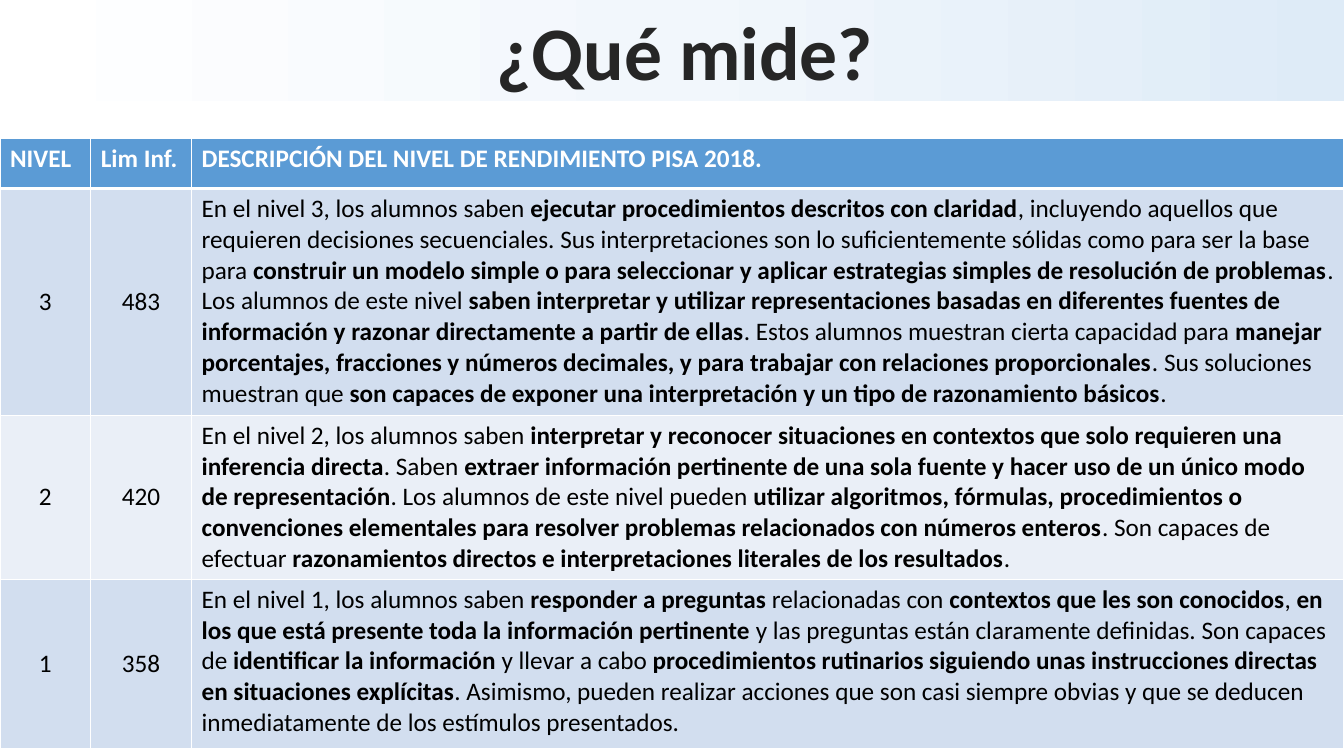
from copy import deepcopy

from lxml.etree import SubElement
from pptx import Presentation
from pptx.dml.color import RGBColor
from pptx.enum.shapes import MSO_SHAPE as Shape
from pptx.enum.text import MSO_ANCHOR as Anchor, MSO_AUTO_SIZE as AutoSize, PP_ALIGN as Align
from pptx.oxml.ns import qn
from pptx.util import Inches, Pt

COLORS = {
    "white": "FFFFFF",
    "pale": "F2F7FC",
    "sky": "DEEBF7",
    "header": "5B9BD5",
    "odd": "D2DEEF",
    "even": "EAEFF7",
    "text": "000000",
    "title": "262626",
}
COLUMN_WIDTHS = [0.9, 1, 11.43]
ROW_HEIGHTS = [0.5, 2.25, 1.59, 1.68]

# Asterisks enclose bold text.
ROWS = [
    ("*NIVEL*", "*Lim Inf.*", "*DESCRIPCIÓN DEL NIVEL DE RENDIMIENTO PISA 2018.*"),
    ("3", "483",
     "En el nivel 3, los alumnos saben *ejecutar procedimientos descritos con claridad*, "
     "incluyendo aquellos que requieren decisiones secuenciales. Sus interpretaciones son lo "
     "suficientemente sólidas como para ser la base para *construir un modelo simple o para "
     "seleccionar y aplicar estrategias simples de resolución de problemas*. Los alumnos de este "
     "nivel *saben interpretar y utilizar representaciones basadas en diferentes fuentes de "
     "información y razonar directamente a partir de ellas*. Estos alumnos muestran cierta "
     "capacidad para *manejar porcentajes, fracciones y números decimales, y para trabajar con "
     "relaciones proporcionales*. Sus soluciones muestran que *son capaces de exponer una "
     "interpretación y un tipo de razonamiento básicos*."),
    ("2", "420",
     "En el nivel 2, los alumnos saben *interpretar y reconocer situaciones en contextos que solo "
     "requieren una inferencia directa*. Saben *extraer información pertinente de una sola fuente "
     "y hacer uso de un único modo de representación*. Los alumnos de este nivel pueden *utilizar "
     "algoritmos, fórmulas, procedimientos o convenciones elementales para resolver problemas "
     "relacionados con números enteros*. Son capaces de efectuar *razonamientos directos e "
     "interpretaciones literales de los resultados*."),
    ("1", "358",
     "En el nivel 1, los alumnos saben *responder a preguntas *relacionadas con *contextos que les "
     "son conocidos*, *en los que está presente toda la información pertinente *y las preguntas "
     "están claramente definidas. Son capaces de *identificar la información *y llevar a cabo "
     "*procedimientos rutinarios siguiendo unas instrucciones directas en situaciones explícitas*. "
     "Asimismo, pueden realizar acciones que son casi siempre obvias y que se deducen "
     "inmediatamente de los estímulos presentados."),
]


def write_text(frame, text, size=18, color="text", align=Align.LEFT):
    """Fill the first paragraph, with bold runs between asterisks."""
    paragraph = frame.paragraphs[0]
    paragraph.alignment = align
    for index, part in enumerate(text.split("*")):
        if part:
            run = paragraph.add_run()
            run.text = part
            run.font.name = "Calibri"
            run.font.size = Pt(size)
            run.font.bold = index % 2 == 1
            run.font.color.rgb = RGBColor.from_string(COLORS[color])
    return paragraph


def add_line(parent, tag, width):
    """Append a white line element; width is in points."""
    line = SubElement(parent, qn(tag), w=str(Pt(width)))
    fill = SubElement(line, qn("a:solidFill"))
    SubElement(fill, qn("a:srgbClr"), val=COLORS["white"])
    return line


presentation = Presentation()
presentation.slide_width = Inches(13.33)
presentation.slide_height = Inches(7.5)
slide = presentation.slides.add_slide(presentation.slide_layouts[6])

# Title band
band = slide.shapes.add_shape(Shape.RECTANGLE, 0, 0, Inches(13.33), Inches(1))
band.shadow.inherit = False
band.line.fill.background()
band.fill.gradient()
band.fill.gradient_angle = 180
stop_list = band._element.spPr.find(".//" + qn("a:gsLst"))
stop_list.insert(1, deepcopy(stop_list[0]))
for stop, position, name in zip(band.fill.gradient_stops, (0, 0.5, 1), ("sky", "pale", "white")):
    stop.position = position
    stop.color.rgb = RGBColor.from_string(COLORS[name])

# Table of levels
table = slide.shapes.add_table(
    len(ROWS), len(COLUMN_WIDTHS), 0, Inches(1.37), Inches(13.33), Inches(sum(ROW_HEIGHTS))
).table
for column, width in zip(table.columns, COLUMN_WIDTHS):
    column.width = Inches(width)
for row, height in zip(table.rows, ROW_HEIGHTS):
    row.height = Inches(height)

for row_index, texts in enumerate(ROWS):
    is_header = row_index == 0
    fill_name = "header" if is_header else ("even", "odd")[row_index % 2]
    for column_index, text in enumerate(texts):
        cell = table.cell(row_index, column_index)
        is_number = not is_header and column_index < 2
        cell.vertical_anchor = Anchor.MIDDLE if is_number else Anchor.TOP
        write_text(cell.text_frame, text, color="white" if is_header else "text",
                   align=Align.CENTER if is_number else Align.LEFT)
        properties = cell._tc.get_or_add_tcPr()
        add_line(properties, "a:lnL", 1)
        add_line(properties, "a:lnR", 1)
        add_line(properties, "a:lnT", 3 if row_index == 1 else 1)
        add_line(properties, "a:lnB", 3 if is_header else 1)
        cell.fill.solid()
        cell.fill.fore_color.rgb = RGBColor.from_string(COLORS[fill_name])

# Title
title = slide.shapes.add_textbox(Inches(4.81), 0, Inches(3.97), Inches(1.01))
title.text_frame.word_wrap = False
title.text_frame.auto_size = AutoSize.SHAPE_TO_FIT_TEXT
heading = write_text(title.text_frame, "*¿Qué mide?*", size=54, color="title", align=Align.CENTER)
run_properties = heading.runs[0].font._element
run_properties.insert(0, add_line(run_properties, "a:ln", 1.06))

presentation.save("out.pptx")
